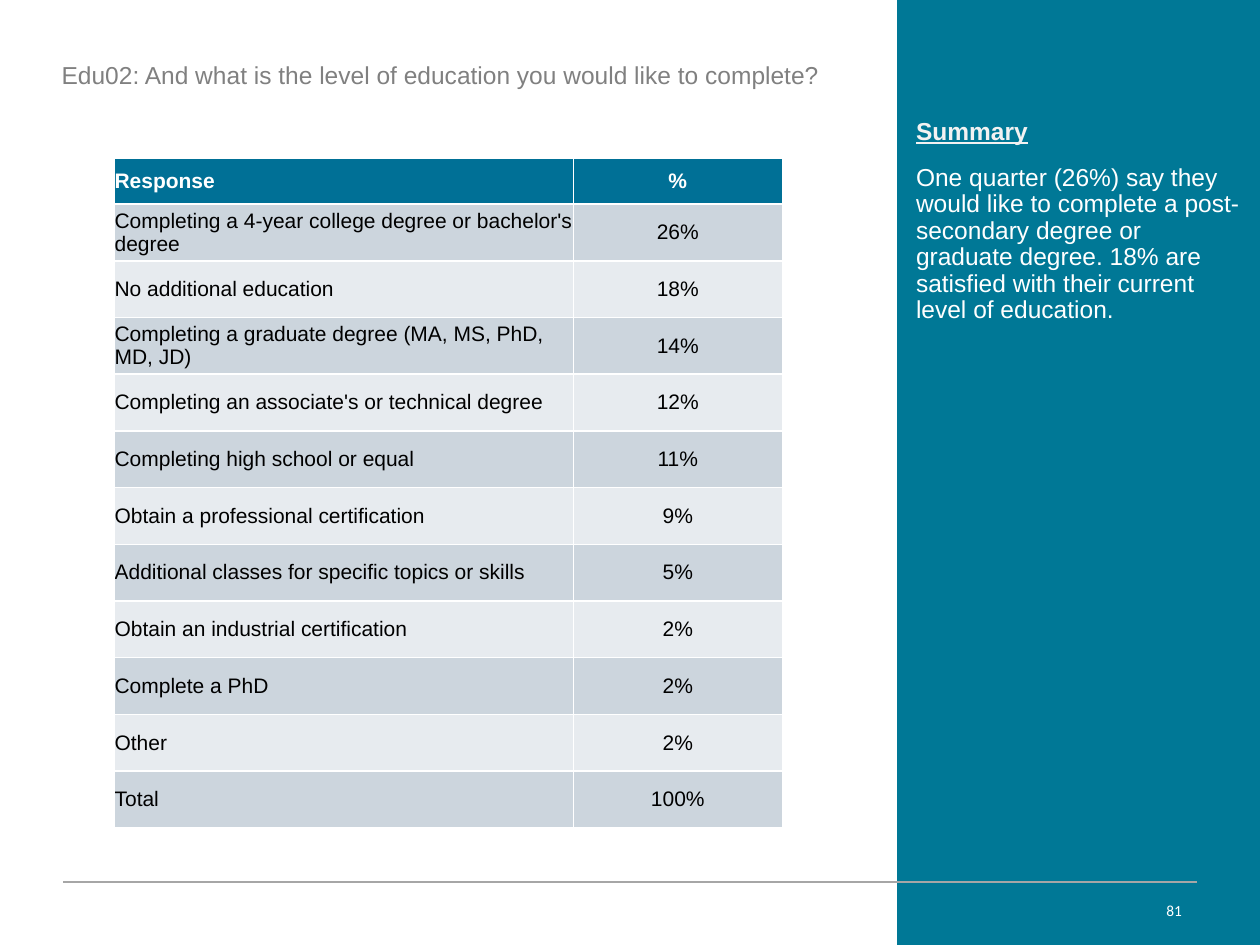
import pptx
import pptx.util
import pptx.dml.color
import pptx.enum.shapes
import pptx.enum.text
import pptx.oxml.xmlchemy
import lxml.etree
from pptx.oxml.ns import qn

RGB = pptx.dml.color.RGBColor
TEAL = RGB(0x00, 0x78, 0x96)
BLUE = RGB(0x00, 0x70, 0x96)
DARK = RGB(0xCC, 0xD5, 0xDD)
PALE = RGB(0xE7, 0xEB, 0xEF)
WHITE = RGB(0xFF, 0xFF, 0xFF)
SNOW = RGB(0xF2, 0xF2, 0xF2)
GREY = RGB(0x80, 0x80, 0x80)
RULE = RGB(0xA6, 0xA6, 0xA6)
BLACK = RGB(0, 0, 0)

ALIGN = pptx.enum.text.PP_ALIGN
MIDDLE = pptx.enum.text.MSO_ANCHOR.MIDDLE

# The slide is a grid of 100 columns by 75 rows
UNIT = pptx.util.Inches(0.1)
COLS, ROWS = 100, 75
EDGE = 71.2          # left edge of the side panel
SIDE = COLS - EDGE   # width of the side panel
PAD = 1.5            # side padding of the panel text

TITLE = "Edu02: And what is the level of education you would like to complete?"
NOTE = ("One quarter (26%) say they would like to complete a post-secondary "
        "degree or graduate degree. 18% are satisfied with their current "
        "level of education.")
DATA = [
    ("Response", "%"),
    ("Completing a 4-year college degree or bachelor's degree", "26%"),
    ("No additional education", "18%"),
    ("Completing a graduate degree (MA, MS, PhD, MD, JD)", "14%"),
    ("Completing an associate's or technical degree", "12%"),
    ("Completing high school or equal", "11%"),
    ("Obtain a professional certification", "9%"),
    ("Additional classes for specific topics or skills", "5%"),
    ("Obtain an industrial certification", "2%"),
    ("Complete a PhD", "2%"),
    ("Other", "2%"),
    ("Total", "100%"),
]


def grid(*units):
    return [round(unit * UNIT) for unit in units]


def write(frame, text, color, size=14, face="Arial", bold=False,
          align=ALIGN.LEFT):
    """Fill a text frame with one paragraph and return it."""
    frame.word_wrap = True
    para = frame.paragraphs[0]
    para.text = text
    para.alignment = align
    font = para.font
    font.name, font.size, font.bold = face, pptx.util.Pt(size), bold
    font.color.rgb = color
    return para


def inset(item, side):
    item.margin_left, item.margin_right = grid(side, side)


def label(slide, box, text, color, side=1, **style):
    frame = slide.shapes.add_textbox(*grid(*box)).text_frame
    inset(frame, side)
    return frame, write(frame, text, color, **style)


def block(slide, box):
    """Add a plain teal rectangle."""
    kind = pptx.enum.shapes.MSO_SHAPE.RECTANGLE
    shape = slide.shapes.add_shape(kind, *grid(*box))
    shape.shadow.inherit = False
    shape.fill.solid()
    shape.fill.fore_color.rgb = TEAL
    shape.line.fill.background()
    return shape


def rule(slide, left, right, top):
    kind = pptx.enum.shapes.MSO_CONNECTOR.STRAIGHT
    line = slide.shapes.add_connector(kind, *grid(left, top, right, top))
    line.line.color.rgb = RULE
    line.line.width = pptx.util.Pt(0.75)
    props = line.element.find(qn("p:spPr"))
    lxml.etree.SubElement(props, qn("a:effectLst"))


def table(slide, left, top, wide, high):
    """Add the response table; its default style draws the white borders."""
    box = grid(left, top, sum(wide), sum(high))
    tab = slide.shapes.add_table(len(high), len(wide), *box).table
    for col, width in zip(tab.columns, grid(*wide)):
        col.width = width
    for row, height in zip(tab.rows, grid(*high)):
        row.height = height
    for r, line in enumerate(DATA):
        head = r == 0
        fill = BLUE if head else (DARK if r % 2 else PALE)
        for c, text in enumerate(line):
            cell = tab.cell(r, c)
            inset(cell, 0)
            cell.margin_top = cell.margin_bottom = 0
            cell.vertical_anchor = MIDDLE
            cell.fill.solid()
            cell.fill.fore_color.rgb = fill
            write(cell.text_frame, text, WHITE if head else BLACK, size=12,
                  bold=head, align=ALIGN.CENTER if c else ALIGN.LEFT)


def main():
    deck = pptx.Presentation()
    deck.slide_width, deck.slide_height = grid(COLS, ROWS)
    slide = deck.slides.add_slide(deck.slide_layouts[6])

    # Side panel with its heading
    block(slide, (EDGE, 0, SIDE, ROWS))
    frame = block(slide, (EDGE, 8.7, SIDE, 3.9)).text_frame
    inset(frame, PAD)
    frame.vertical_anchor = pptx.enum.text.MSO_ANCHOR.TOP
    write(frame, "Summary", SNOW, bold=True).font.underline = True

    # Footer: page number in small caps, and rule
    frame, para = label(slide, (57.3, 70.6, 37.7, 3), "81", WHITE, side=1.2,
                        size=11, face="Calibri", align=ALIGN.RIGHT)
    frame.vertical_anchor = MIDDLE
    para.runs[0].font._element.set("cap", "small")
    rule(slide, 5, 95, 70)

    # Question and summary text
    for box, text, color, side in (
            ((3.9, 4.5, 64.1, 6.7), TITLE, GREY, 1),
            ((EDGE, 12.6, SIDE, 24.6), NOTE, WHITE, PAD)):
        label(slide, box, text, color, side)[1].line_spacing = 0.9

    # Responses
    table(slide, 9.1, 12.6, (36.4, 16.6), [3.6] + [4.5] * (len(DATA) - 1))

    deck.save("out.pptx")


if __name__ == "__main__":
    main()
